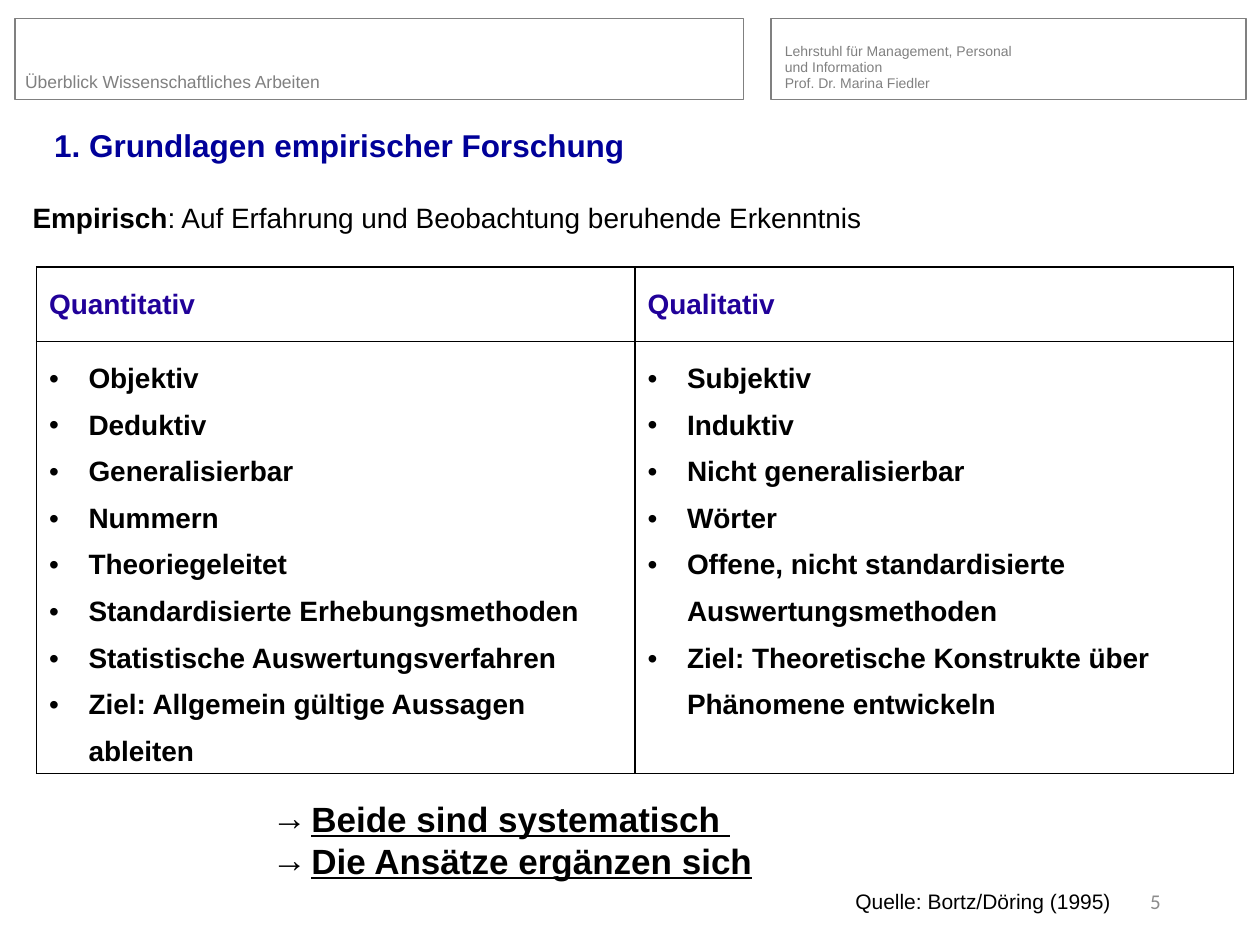
from dataclasses import dataclass, field

from lxml import etree
from pptx import Presentation
from pptx.dml.color import RGBColor
from pptx.enum.shapes import MSO_SHAPE
from pptx.enum.text import MSO_ANCHOR, PP_ALIGN
from pptx.oxml.ns import qn
from pptx.slide import Slide
from pptx.table import _Cell
from pptx.text.text import TextFrame
from pptx.util import Pt

RECTANGLE = MSO_SHAPE.RECTANGLE
TOP, MIDDLE, BOTTOM = MSO_ANCHOR.TOP, MSO_ANCHOR.MIDDLE, MSO_ANCHOR.BOTTOM
LEFT, RIGHT = PP_ALIGN.LEFT, PP_ALIGN.RIGHT

COLORS = {
    "header": "808080",
    "number": "8C8C8C",
    "title": "000099",
    "column": "210199",
    "text": "000000",
}
BULLET_INDENT = 22.5
TEXT_INSETS = (7.2, 3.6)


@dataclass
class Run:
    text: str
    size: float
    color: str = "text"
    bold: bool = False
    underline: bool = False
    font: str = "Arial"


@dataclass
class Line:
    """One paragraph; a newline inside a run becomes a line break."""
    runs: list[Run]
    spacing: float = 1.0
    bullet: str = ""
    align: PP_ALIGN = LEFT


@dataclass
class Label:
    box: tuple[float, float, float, float]
    lines: list[Line]
    anchor: MSO_ANCHOR = TOP
    insets: tuple[float, float] = field(default=TEXT_INSETS)


@dataclass
class Column:
    heading: str
    points: list[str]


HEADER_FRAMES = [(8.64, 10.8, 416.16, 46.08), (440.64, 10.8, 271.44, 46.08)]

LABELS = [
    Label((14.4, 21.6, 240.5, 31),
          [Line([Run("Überblick Wissenschaftliches Arbeiten", 10, "header")])],
          BOTTOM, (0, 0)),
    Label((448.5, 17.3, 211, 35.3),
          [Line([Run(text, 8, "header")], 0.95) for text in (
              "Lehrstuhl für Management, Personal\nund Information",
              "Prof. Dr. Marina Fiedler")],
          BOTTOM, (0, 0)),
    Label((23.8, 66.2, 678.2, 36),
          [Line([Run("1. Grundlagen empirischer Forschung", 18, "title", bold=True)], 0.9)],
          MIDDLE),
    Label((11.5, 110.9, 491, 26.6),
          [Line([Run("Empirisch", 16, bold=True),
                 Run(": Auf Erfahrung und Beobachtung beruhende Erkenntnis", 16)])]),
    Label((148.3, 452, 354.2, 56),
          [Line([Run(text, 20, bold=True, underline=True)], bullet="→")
           for text in ("Beide sind systematisch ", "Die Ansätze ergänzen sich")]),
    Label((481.7, 504, 172.8, 21.6), [Line([Run("Quelle: Bortz/Döring (1995)", 12)])]),
    Label((508.3, 500.4, 162, 28.8),
          [Line([Run("5", 12, "number", font="Calibri")], align=RIGHT)], MIDDLE),
]

TABLE_BOX = (20.9, 152.6, 684, 289.5)
ROW_HEIGHTS = (42.5, 247)
COLUMNS = [
    Column("Quantitativ", [
        "Objektiv", "Deduktiv", "Generalisierbar", "Nummern", "Theoriegeleitet",
        "Standardisierte Erhebungsmethoden",
        "Statistische Auswertungsverfahren",
        "Ziel: Allgemein gültige Aussagen ableiten"]),
    Column("Qualitativ", [
        "Subjektiv", "Induktiv", "Nicht generalisierbar", "Wörter",
        "Offene, nicht standardisierte Auswertungsmethoden",
        "Ziel: Theoretische Konstrukte über Phänomene entwickeln"]),
]


def points(values: tuple[float, ...]) -> list[Pt]:
    return [Pt(value) for value in values]


def write_lines(text_frame: TextFrame, lines: list[Line]) -> None:
    for index, line in enumerate(lines):
        paragraph = text_frame.add_paragraph() if index else text_frame.paragraphs[0]
        paragraph.alignment = line.align
        paragraph.line_spacing = line.spacing
        if line.bullet:
            properties = paragraph._p.get_or_add_pPr()
            properties.set("marL", str(Pt(BULLET_INDENT)))
            properties.set("indent", str(-Pt(BULLET_INDENT)))
            etree.SubElement(properties, qn("a:buFont"), typeface="Arial")
            etree.SubElement(properties, qn("a:buChar"), char=line.bullet)
        for item in line.runs:
            for part_index, part in enumerate(item.text.split("\n")):
                if part_index:
                    paragraph.add_line_break()
                run = paragraph.add_run()
                run.text = part
                run.font.color.rgb = RGBColor.from_string(COLORS[item.color])
                font_format = {"name": item.font, "size": Pt(item.size),
                               "bold": item.bold, "underline": item.underline}
                for name, value in font_format.items():
                    setattr(run.font, name, value)


def add_frame(slide: Slide, box: tuple[float, ...]) -> None:
    shape = slide.shapes.add_shape(RECTANGLE, *points(box))
    shape.shadow.inherit = False
    shape.fill.background()
    shape.line.color.rgb = RGBColor.from_string(COLORS["header"])
    shape.line.width = Pt(0.75)


def add_label(slide: Slide, label: Label) -> None:
    text_frame = slide.shapes.add_textbox(*points(label.box)).text_frame
    horizontal, vertical = points(label.insets)
    frame_format = {"word_wrap": True, "vertical_anchor": label.anchor,
                    "margin_left": horizontal, "margin_right": horizontal,
                    "margin_top": vertical, "margin_bottom": vertical}
    for name, value in frame_format.items():
        setattr(text_frame, name, value)
    write_lines(text_frame, label.lines)


def style_cell(cell: _Cell) -> None:
    """Give the cell a black outline and no fill."""
    properties = cell._tc.get_or_add_tcPr()
    for side in ("a:lnL", "a:lnR", "a:lnT", "a:lnB"):
        border = etree.SubElement(properties, qn(side), w=str(Pt(1)))
        fill = etree.SubElement(border, qn("a:solidFill"))
        etree.SubElement(fill, qn("a:srgbClr"), val=COLORS["text"])
    cell.fill.background()


def add_comparison(slide: Slide, columns: list[Column]) -> None:
    table = slide.shapes.add_table(len(ROW_HEIGHTS), len(columns), *points(TABLE_BOX)).table
    table.first_row = False
    table.horz_banding = False
    for row, height in zip(table.rows, ROW_HEIGHTS):
        row.height = Pt(height)
    for index, column in enumerate(columns):
        heading = [Line([Run(column.heading, 16, "column", bold=True)], 1.5)]
        body = [Line([Run(text, 16, bold=True)], 1.5, "•") for text in column.points]
        for row_index, lines in enumerate((heading, body)):
            cell = table.cell(row_index, index)
            style_cell(cell)
            write_lines(cell.text_frame, lines)


def main() -> None:
    presentation = Presentation()
    presentation.slide_width, presentation.slide_height = Pt(720), Pt(540)
    slide = presentation.slides.add_slide(presentation.slide_layouts[6])
    for box in HEADER_FRAMES:
        add_frame(slide, box)
    add_comparison(slide, COLUMNS)
    for label in LABELS:
        add_label(slide, label)
    presentation.save("out.pptx")


if __name__ == "__main__":
    main()
